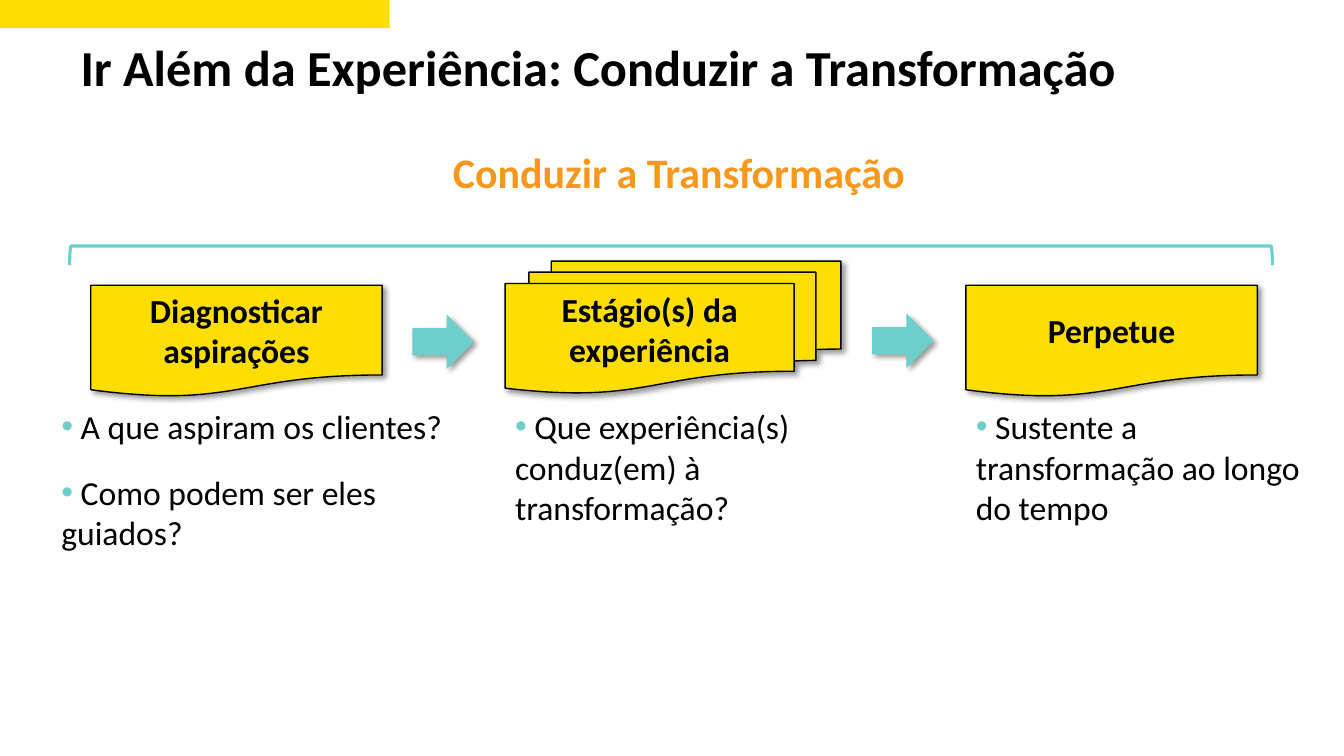
from lxml.etree import SubElement
from pptx import Presentation
from pptx.dml.color import RGBColor
from pptx.enum.shapes import MSO_SHAPE
from pptx.enum.text import MSO_ANCHOR, PP_ALIGN
from pptx.oxml.ns import qn
from pptx.util import Inches, Pt

WIDTH, HEIGHT = 13.33, 7.5
YELLOW, TEAL, ORANGE, BLACK = "FDDE00", "6ECECB", "F7981D", "000000"
FLOW_TOP, CARD_HEIGHT, BULLET_TOP = 2.83, 1.11, 3.98

STAGES = [
    dict(card=(0.9, FLOW_TOP, 2.89, CARD_HEIGHT), kind=MSO_SHAPE.FLOWCHART_DOCUMENT,
         label=["Diagnosticar", "aspirações"], anchor=MSO_ANCHOR.MIDDLE,
         notes=(0.51, BULLET_TOP, 4.45, 1.57), space_after=18,
         bullets=["A que aspiram os clientes?", "Como podem ser eles guiados?"]),
    dict(card=(5.01, 2.59, 3.33, 1.31), kind=MSO_SHAPE.FLOWCHART_MULTIDOCUMENT,
         label=["Estágio(s) da experiência"], anchor=MSO_ANCHOR.TOP,
         notes=(5.01, BULLET_TOP, 3.91, 1.97), space_after=18,
         bullets=["Que experiência(s) conduz(em) à transformação?"]),
    dict(card=(9.58, FLOW_TOP, 2.89, CARD_HEIGHT), kind=MSO_SHAPE.FLOWCHART_DOCUMENT,
         label=["Perpetue"], anchor=MSO_ANCHOR.MIDDLE,
         notes=(9.58, BULLET_TOP, 3.67, 1.31), space_after=6,
         bullets=["Sustente a transformação ao longo do tempo"]),
]
ARROWS = [(4.09, 3.12, 0.61, 0.54), (8.65, 3.11, 0.61, 0.54)]


def color(value):
    return RGBColor.from_string(value)


def add_bullet(paragraph):
    properties = paragraph._p.get_or_add_pPr()
    properties.set("marL", "0")
    properties.set("indent", "0")
    bullet_color = SubElement(properties, qn("a:buClr"))
    SubElement(bullet_color, qn("a:srgbClr"), val=TEAL)
    SubElement(properties, qn("a:buFont"), typeface="Arial")
    SubElement(properties, qn("a:buChar"), char="•")


def write(shape, lines, size=24, fill=BLACK, bold=False, align=PP_ALIGN.LEFT,
          anchor=MSO_ANCHOR.TOP, bullets=False, space_after=0, line_spacing=None):
    frame = shape.text_frame
    frame.word_wrap = True
    frame.vertical_anchor = anchor
    for index, line in enumerate(lines):
        paragraph = frame.paragraphs[0] if index == 0 else frame.add_paragraph()
        if bullets:
            add_bullet(paragraph)
        paragraph.alignment = align
        paragraph.space_after = Pt(space_after)
        if line_spacing:
            paragraph.line_spacing = line_spacing
        run = paragraph.add_run()
        run.text = f" {line}" if bullets else line
        font = run.font
        font.name, font.size, font.bold = "Calibri", Pt(size), bold
        font.color.rgb = color(fill)


def add_text(slide, box, lines, **style):
    write(slide.shapes.add_textbox(*map(Inches, box)), lines, **style)


def add_shadow(shape):
    effects = shape._element.spPr.find(qn("a:effectLst"))
    shadow = SubElement(effects, qn("a:outerShdw"), blurRad=str(Pt(4)), dist=str(Pt(3)),
                        dir="2700000", algn="tl", rotWithShape="0")
    shade = SubElement(shadow, qn("a:srgbClr"), val=BLACK)
    SubElement(shade, qn("a:alpha"), val="40000")


def add_figure(slide, kind, box, fill=None, line=None, line_width=1, shadow=False):
    shape = slide.shapes.add_shape(kind, *map(Inches, box))
    shape.shadow.inherit = False
    if fill:
        shape.fill.solid()
        shape.fill.fore_color.rgb = color(fill)
    else:
        shape.fill.background()
    if line:
        shape.line.color.rgb = color(line)
        shape.line.width = Pt(line_width)
    else:
        shape.line.fill.background()
    if shadow:
        add_shadow(shape)
    return shape


def add_header(slide, box):
    left, top, width, height = box
    add_figure(slide, MSO_SHAPE.RECTANGLE, (left, top, 0.29 * width, 0.28), fill=YELLOW)
    add_text(slide, (left + 0.7, top + 0.38, width - 1.08, height - 0.38),
             ["Ir Além da Experiência: Conduzir a Transformação"],
             size=36, bold=True, line_spacing=0.9)


def add_span(slide, box):
    left, top, width, height = box
    add_text(slide, (left + 0.08, top, width, 0.61), ["Conduzir a Transformação"],
             size=30, fill=ORANGE, bold=True, align=PP_ALIGN.CENTER, space_after=6)
    depth = 0.19
    middle_x, middle_y = left + width / 2, top + height - depth / 2
    bracket = add_figure(slide, MSO_SHAPE.LEFT_BRACKET,
                         (middle_x - depth / 2, middle_y - width / 2, depth, width),
                         line=TEAL, line_width=2.25)
    bracket.rotation = 90


def add_stage(slide, card, kind, label, anchor, notes, bullets, space_after):
    shape = add_figure(slide, kind, card, fill=YELLOW, line=BLACK, shadow=True)
    write(shape, label, bold=True, align=PP_ALIGN.CENTER, anchor=anchor)
    add_text(slide, notes, bullets, bullets=True, space_after=space_after)


def main():
    presentation = Presentation()
    presentation.slide_width, presentation.slide_height = Inches(WIDTH), Inches(HEIGHT)
    slide = presentation.slides.add_slide(presentation.slide_layouts[6])
    add_header(slide, (0, 0, WIDTH, 1.14))
    for stage in STAGES:
        add_stage(slide, **stage)
    for box in ARROWS:
        add_figure(slide, MSO_SHAPE.RIGHT_ARROW, box, fill=TEAL, shadow=True)
    add_span(slide, (0.69, 1.4, 11.93, 1.23))
    presentation.save("out.pptx")


if __name__ == "__main__":
    main()
